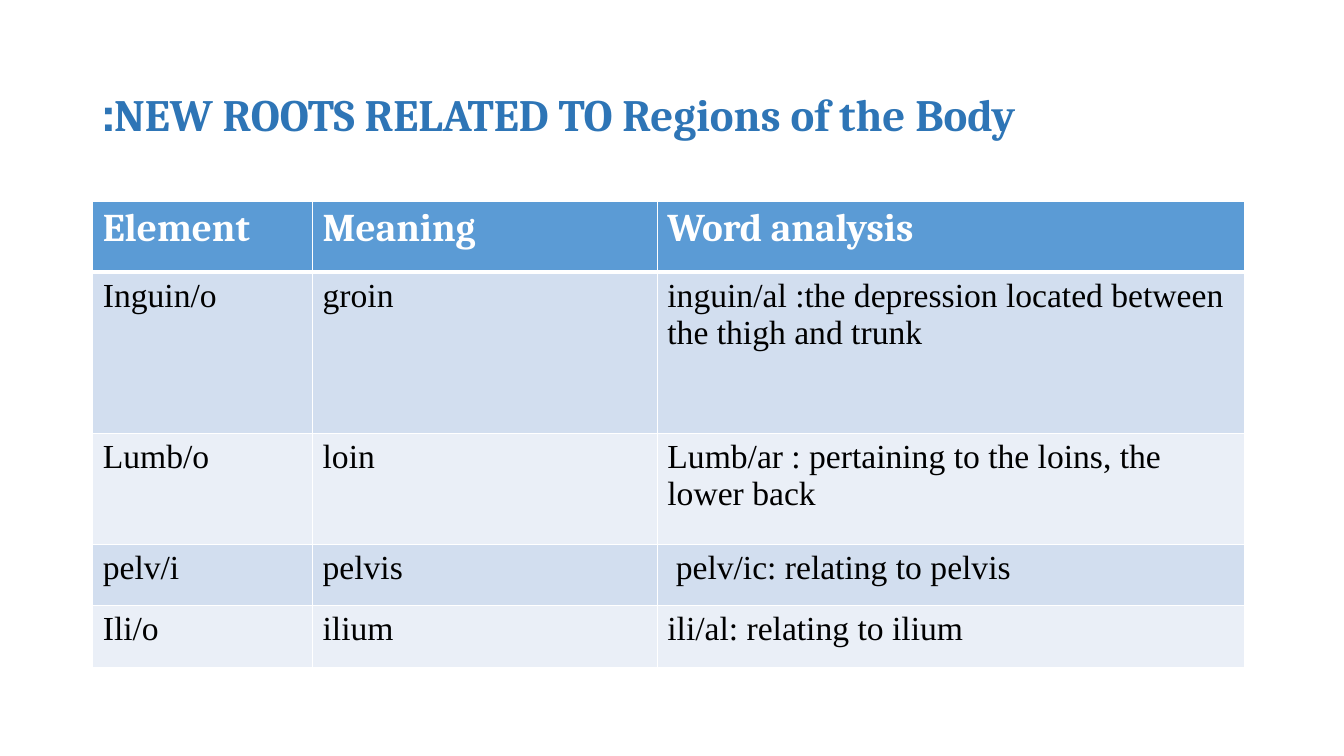
"""Build a slide with a table of medical word roots for regions of the body."""
from lxml.etree import SubElement as Sub
from pptx import Presentation
from pptx.dml.color import RGBColor as Rgb
from pptx.enum.text import MSO_ANCHOR as Anchor, PP_ALIGN as Align
from pptx.oxml.ns import qn
from pptx.util import Inches, Pt

COLORS = {"title": "2E75B6", "head": "5B9BD5", "odd": "D2DEEF",
          "even": "EAEFF7", "white": "FFFFFF", "black": "000000"}
WIDTHS = [2.18, 3.42, 5.82]
HEIGHTS = [0.7, 1.6, 1.1, 0.61, 0.61]
ROOTS = [
    ("Element", "Meaning", "Word analysis"),
    ("Inguin/o", "groin",
     "inguin/al :the depression located between the thigh and trunk"),
    ("Lumb/o", "loin", "Lumb/ar : pertaining to the loins, the lower back"),
    ("pelv/i", "pelvis", "pelv/ic: relating to pelvis "),
    ("Ili/o", "ilium", "ili/al: relating to ilium"),
]


def color(name):
    return Rgb.from_string(COLORS[name])


def write(frame, text, face, size, tint, bold):
    frame.text = text
    para = frame.paragraphs[0]
    para.alignment = Align.LEFT
    para._p.get_or_add_pPr().set("rtl", "1")
    font = para.runs[0].font
    font.name, font.size, font.bold = face, Pt(size), bold
    font.color.rgb = color(tint)


def edge(cell, side, width):
    line = Sub(cell._tc.get_or_add_tcPr(), qn(f"a:ln{side}"), w=str(Pt(width)))
    Sub(Sub(line, qn("a:solidFill")), qn("a:srgbClr"), val=COLORS["white"])


def add_title(slide, text):
    title = slide.shapes.title
    title.left, title.top = Inches(0.92), Inches(0.4)
    title.width, title.height = Inches(9.88), Inches(1.45)
    write(title.text_frame, text, "Cambria", 32, "title", True)
    title.text_frame.vertical_anchor = Anchor.MIDDLE


def fill_cell(cell, text, row):
    for side in "LRTB":
        thick = (row, side) in ((0, "B"), (1, "T"))
        edge(cell, side, 3 if thick else 1)
    cell.fill.solid()
    if row == 0:
        cell.fill.fore_color.rgb = color("head")
        write(cell.text_frame, text, "Cambria", 28, "white", True)
    else:
        cell.fill.fore_color.rgb = color("odd" if row % 2 else "even")
        write(cell.text_frame, text, "Times New Roman", 24, "black", False)


def add_roots(slide):
    table = slide.shapes.add_table(
        len(ROOTS), len(WIDTHS), Inches(0.92), Inches(2),
        Inches(sum(WIDTHS)), Inches(sum(HEIGHTS))).table
    for col, width in zip(table.columns, WIDTHS):
        col.width = Inches(width)
    for row, height in zip(table.rows, HEIGHTS):
        row.height = Inches(height)
    for r, texts in enumerate(ROOTS):
        for c, text in enumerate(texts):
            fill_cell(table.cell(r, c), text, r)


def main():
    deck = Presentation()
    deck.slide_width, deck.slide_height = Inches(13.33), Inches(7.5)
    slide = deck.slides.add_slide(deck.slide_layouts[5])
    add_title(slide, "NEW ROOTS RELATED TO Regions of the Body:")
    add_roots(slide)
    deck.save("out.pptx")


if __name__ == "__main__":
    main()
